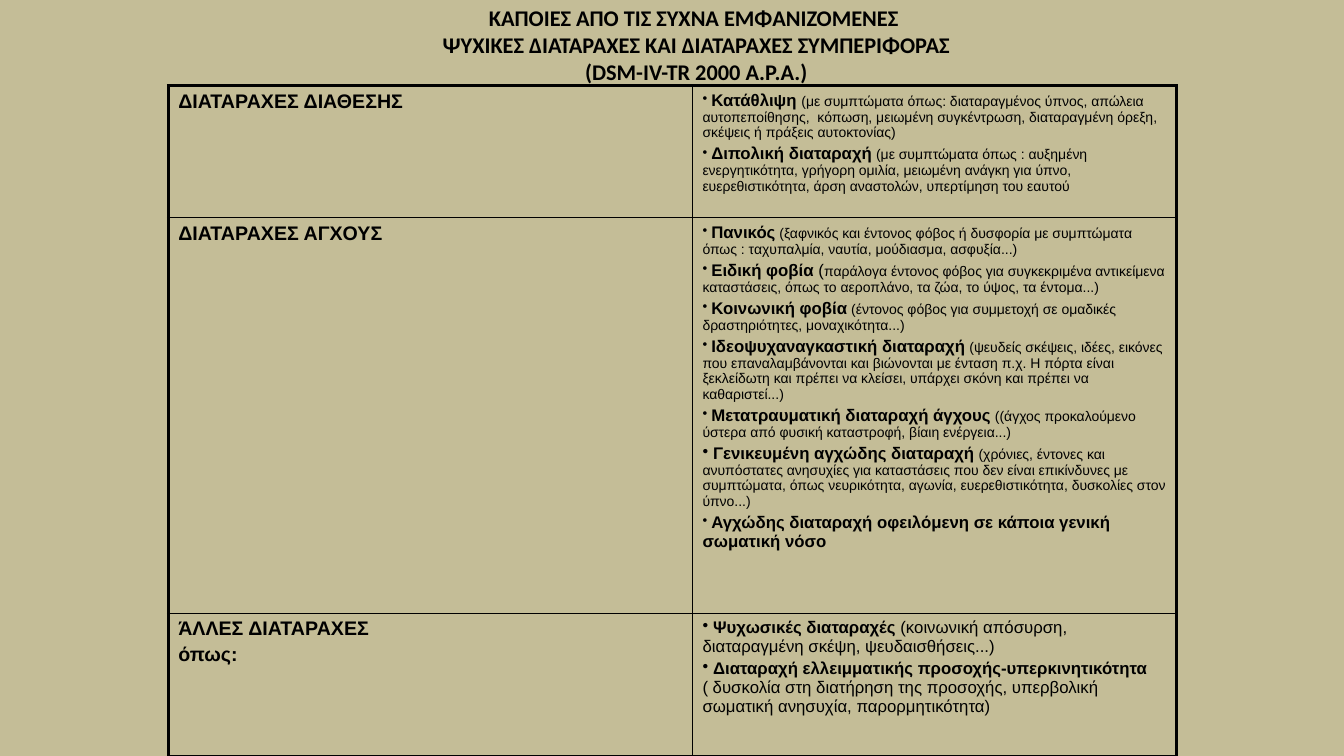
from pptx import Presentation
from pptx import util as u
from pptx.dml.color import RGBColor
from pptx.enum import text
from pptx.oxml import parse_xml
from pptx.oxml.ns import nsdecls

INK, SAND = "000000", "C4BD97"
OUTER, INNER = 2.25, 1


def color(code):
    """Turn a hex string into a colour."""
    return RGBColor.from_string(code)


def strong(words):
    """Describe a bold run naming a disorder."""
    return words, 12, True


def plain(words):
    """Describe a regular run at the size of the names."""
    return words, 12, False


def small(words):
    """Describe a regular run of symptoms."""
    return words, 10, False


def heading(words):
    """Describe a paragraph naming a family of disorders."""
    return [(words, 14, True)]


class Deck:
    """Holds the style and the current slide."""

    def __init__(self, body_font, title_font):
        """Open a presentation with one coloured blank slide."""
        self.body_font, self.title_font = body_font, title_font
        self.file = Presentation()
        self.file.slide_width, self.file.slide_height = u.Cm(33.87), u.Cm(19.05)
        self.slide = self.file.slides.add_slide(self.file.slide_layouts[6])
        self.slide.background.fill.solid()
        self.slide.background.fill.fore_color.rgb = color(SAND)

    def add_runs(self, paragraph, runs, font):
        """Add runs to a paragraph, breaking lines at newlines."""
        for words, size, bold in runs:
            for number, line in enumerate(words.split("\n")):
                if number:
                    paragraph.add_line_break()
                if line:
                    run = paragraph.add_run()
                    run.text = line
                    run.font.name, run.font.size = font, u.Pt(size)
                    run.font.bold = bold
                    run.font.color.rgb = color(INK)

    def title(self, words, left, top, width, height):
        """Place the centred title."""
        box = self.slide.shapes.add_textbox(*map(u.Cm, (left, top, width, height)))
        frame = box.text_frame
        frame.word_wrap = True
        frame.vertical_anchor = text.MSO_ANCHOR.MIDDLE
        frame.paragraphs[0].alignment = text.PP_ALIGN.CENTER
        self.add_runs(frame.paragraphs[0], [(words, 16, True)], self.title_font)

    def fill_cell(self, cell, paragraphs, bulleted):
        """Put the paragraphs into one cell."""
        frame = cell.text_frame
        for number, runs in enumerate(paragraphs):
            paragraph = frame.add_paragraph() if number else frame.paragraphs[0]
            if bulleted:
                paragraph._p.get_or_add_pPr().append(
                    parse_xml(f'<a:buChar {nsdecls("a")} char="•"/>'))
            paragraph.space_before = u.Pt(2.5 if number else 0)
            self.add_runs(paragraph, runs, self.body_font)

    def border(self, cell, widths):
        """Draw the four sides of a cell and clear its fill."""
        properties = cell._tc.get_or_add_tcPr()
        for side, width in zip("LRTB", widths):
            properties.append(parse_xml(
                f'<a:ln{side} {nsdecls("a")} w="{u.Pt(width)}"><a:solidFill>'
                f'<a:srgbClr val="{INK}"/></a:solidFill></a:ln{side}>'))
        cell.fill.background()

    def table(self, rows, left, top, widths, heights):
        """Place a table with a heavy frame and thin inner lines."""
        size = (left, top, sum(widths), sum(heights))
        grid = self.slide.shapes.add_table(
            len(heights), len(widths), *map(u.Cm, size)).table
        grid.first_row = grid.horz_banding = False
        for column, width in zip(grid.columns, widths):
            column.width = u.Cm(width)
        for r, (row, height) in enumerate(zip(rows, heights)):
            grid.rows[r].height = u.Cm(height)
            for c, paragraphs in enumerate(row):
                edges = (c == 0, c == len(widths) - 1, r == 0, r == len(heights) - 1)
                cell = grid.cell(r, c)
                self.border(cell, [OUTER if edge else INNER for edge in edges])
                self.fill_cell(cell, paragraphs, bulleted=c == 1)


MOOD = [
    [small(" "), strong("Κατάθλιψη "),
     small("(με συμπτώματα όπως: διαταραγμένος ύπνος, απώλεια αυτοπεποίθησης,  κόπωση, "
           "μειωμένη συγκέντρωση, διαταραγμένη όρεξη, σκέψεις ή πράξεις αυτοκτονίας)")],
    [small(" "), strong("Διπολική διαταραχή"),
     small(" (με συμπτώματα όπως : αυξημένη ενεργητικότητα, γρήγορη ομιλία, μειωμένη "
           "ανάγκη για ύπνο, ευερεθιστικότητα, άρση αναστολών, υπερτίμηση του εαυτού")],
]
ANXIETY = [
    [small(" "), strong("Πανικός"),
     small(" (ξαφνικός και έντονος φόβος ή δυσφορία με συμπτώματα όπως : ταχυπαλμία, "
           "ναυτία, μούδιασμα, ασφυξία...)")],
    [small(" "), strong("Ειδική φοβία"), plain(" ("),
     small("παράλογα έντονος φόβος για συγκεκριμένα αντικείμενα καταστάσεις, όπως το "
           "αεροπλάνο, τα ζώα, το ύψος, τα έντομα...)")],
    [small(" "), strong("Κοινωνική φοβία"),
     small(" (έντονος φόβος για συμμετοχή σε ομαδικές δραστηριότητες, μοναχικότητα...)")],
    [small(" "), strong("Ιδεοψυχαναγκαστική διαταραχή"),
     small(" (ψευδείς σκέψεις, ιδέες, εικόνες που επαναλαμβάνονται και βιώνονται με "
           "ένταση π.χ. Η πόρτα είναι ξεκλείδωτη και πρέπει να κλείσει, υπάρχει σκόνη "
           "και πρέπει να καθαριστεί...)")],
    [small(" "), strong("Μετατραυματική διαταραχή άγχους"),
     small(" ((άγχος προκαλούμενο ύστερα από φυσική καταστροφή, βίαιη ενέργεια...)")],
    [strong(" Γενικευμένη αγχώδης διαταραχή"),
     small(" (χρόνιες, έντονες και ανυπόστατες ανησυχίες για καταστάσεις που δεν είναι "
           "επικίνδυνες με συμπτώματα, όπως νευρικότητα, αγωνία, ευερεθιστικότητα, "
           "δυσκολίες στον ύπνο...)")],
    [small(" "), strong("Αγχώδης διαταραχή οφειλόμενη σε κάποια γενική σωματική νόσο")],
]
OTHER = [
    [plain(" "), strong("Ψυχωσικές διαταραχές"),
     plain(" (κοινωνική απόσυρση, διαταραγμένη σκέψη, ψευδαισθήσεις...)")],
    [plain(" "), strong("Διαταραχή ελλειμματικής προσοχής-υπερκινητικότητα"),
     plain("\n( δυσκολία στη διατήρηση της προσοχής, υπερβολική σωματική ανησυχία, "
           "παρορμητικότητα)")],
]


def main():
    """Build the slide and save it."""
    deck = Deck("Arial", "Calibri")
    deck.title("KAΠΟΙΕΣ ΑΠΟ ΤΙΣ ΣΥΧΝΑ ΕΜΦΑΝΙΖΟΜΕΝΕΣ \n"
               "ΨΥΧΙΚΕΣ ΔΙΑΤΑΡΑΧΕΣ ΚΑΙ ΔΙΑΤΑΡΑΧΕΣ ΣΥΜΠΕΡΙΦΟΡΑΣ\n"
               "(DSM-IV-TR 2000 A.P.A.)", 6.12, 0.53, 22.86, 1.19)
    disorders = [
        ([heading("ΔΙΑΤΑΡΑΧΕΣ ΔΙΑΘΕΣΗΣ")], MOOD),
        ([heading("ΔΙΑΤΑΡΑΧΕΣ ΑΓΧΟΥΣ")], ANXIETY),
        ([heading("ΆΛΛΕΣ ΔΙΑΤΑΡΑΧΕΣ"), heading("όπως:")], OTHER),
    ]
    deck.table(disorders, 4.24, 2.16, [13.21, 12.19], [3.33, 9.96, 3.61])
    deck.file.save("out.pptx")


if __name__ == "__main__":
    main()
